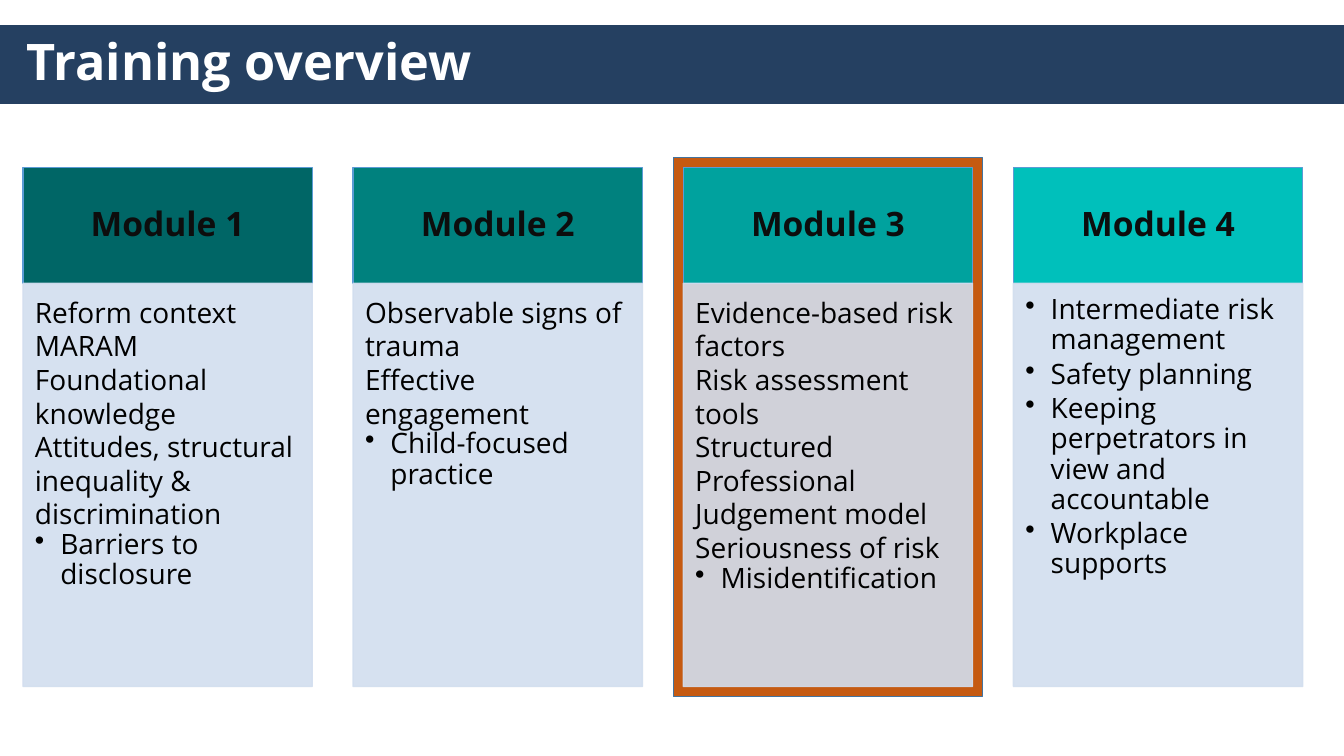
from dataclasses import dataclass

from lxml import etree
from pptx import Presentation
from pptx import util as u
from pptx.dml import color as dml
from pptx.enum import shapes, text
from pptx.oxml import ns

FONT = "Open Sans"
LEFT, TOP, STEP, WIDTH = 0.58, 4.22, 8.32, 7.29
HEAD, BODY = 2.92, 10.16
RIM = 0.25
HANG = 0.64


@dataclass
class Box:
    left: float
    top: float
    width: float
    height: float

    def args(self) -> list:
        return [u.Cm(n) for n in (self.left, self.top, self.width, self.height)]


@dataclass
class Module:
    name: str
    fill: str
    plain: list[str]
    points: list[str]
    ring: bool = False


MODULES = [
    Module("Module 1", "006666",
           ["Reform context", "MARAM", "Foundational knowledge",
            "Attitudes, structural inequality & discrimination"],
           ["Barriers to disclosure"]),
    Module("Module 2", "00817E",
           ["Observable signs of trauma", "Effective engagement"],
           ["Child-focused practice"]),
    Module("Module 3", "00A29E",
           ["Evidence-based risk factors", "Risk assessment tools",
            "Structured Professional Judgement model", "Seriousness of risk"],
           ["Misidentification"], ring=True),
    Module("Module 4", "00C0BB", [],
           ["Intermediate risk management", "Safety planning",
            "Keeping perpetrators in view and accountable",
            "Workplace supports"]),
]


def rgb(code: str) -> dml.RGBColor:
    return dml.RGBColor.from_string(code)


def put(item, values: dict) -> None:
    for key, value in values.items():
        setattr(item, key, value)


def rect(slide, box: Box, fill: str, line: str, alpha: int = 100):
    shape = slide.shapes.add_shape(shapes.MSO_SHAPE.RECTANGLE, *box.args())
    shape.shadow.inherit = False
    shape.fill.solid()
    shape.fill.fore_color.rgb = rgb(fill)
    shape.line.color.rgb = rgb(line)
    shape.line.width = u.Pt(1)
    if alpha < 100:
        for tone in shape._element.spPr.iter(ns.qn("a:srgbClr")):
            etree.SubElement(tone, ns.qn("a:alpha"), val=str(alpha * 1000))
    return shape


def setup(shape, insets: tuple, anchor):
    frame = shape.text_frame
    sides = ("margin_left", "margin_top", "margin_right", "margin_bottom")
    put(frame, {"word_wrap": True, "vertical_anchor": anchor})
    put(frame, dict(zip(sides, map(u.Cm, insets))))
    return frame


def write(para, words: str, size: int, tone: str, bold: bool = False,
          align=text.PP_ALIGN.LEFT, space: float = 0.9, after: float = 0) -> None:
    para.text = words
    put(para, {"alignment": align, "line_spacing": space,
               "space_before": u.Pt(0), "space_after": u.Pt(after)})
    put(para.font, {"name": FONT, "size": u.Pt(size), "bold": bold})
    para.font.color.rgb = rgb(tone)


def bullet(para) -> None:
    props = para._p.get_or_add_pPr()
    props.set("marL", str(u.Cm(HANG)))
    props.set("indent", str(-u.Cm(HANG)))
    etree.SubElement(props, ns.qn("a:buChar"), char="•")


def column(slide, left: float, mod: Module) -> None:
    # Highlight behind the current module
    if mod.ring:
        ring = Box(left - RIM, TOP - RIM, WIDTH + 2 * RIM, HEAD + BODY + 2 * RIM)
        rect(slide, ring, "C55A11", "43739E")

    # Heading
    head = rect(slide, Box(left, TOP, WIDTH, HEAD), mod.fill, "5B9BD5")
    frame = setup(head, (0.48, 0.28, 0.48, 0.28), text.MSO_ANCHOR.MIDDLE)
    write(frame.paragraphs[0], mod.name, 24, "0D0D0D", True,
          text.PP_ALIGN.CENTER)

    # Topics: plain lines, then bullets
    body = rect(slide, Box(left, TOP + HEAD, WIDTH, BODY), "D2DEEF", "D2DEEF", 90)
    frame = setup(body, (0.3, 0.3, 0.41, 0.43), text.MSO_ANCHOR.TOP)
    for i, words in enumerate(mod.plain + mod.points):
        para = frame.add_paragraph() if i else frame.paragraphs[0]
        if i < len(mod.plain):
            write(para, words, 20, "000000", space=1.0)
        else:
            bullet(para)
            write(para, words, 20, "000000", after=3)


def main() -> None:
    deck = Presentation()
    put(deck, {"slide_width": u.Cm(33.87), "slide_height": u.Cm(19.05)})
    slide = deck.slides.add_slide(deck.slide_layouts[6])

    # Module columns
    for i, mod in enumerate(MODULES):
        column(slide, LEFT + i * STEP, mod)

    # Title bar
    rect(slide, Box(0, 0.64, 33.87, 1.96), "254061", "254061")
    title = slide.shapes.add_textbox(*Box(0.43, 0.64, 29.21, 1.96).args())
    frame = setup(title, (0.25, 0.13, 0.25, 0.13), text.MSO_ANCHOR.MIDDLE)
    write(frame.paragraphs[0], "Training overview", 36, "FFFFFF", True)

    deck.save("out.pptx")


if __name__ == "__main__":
    main()
